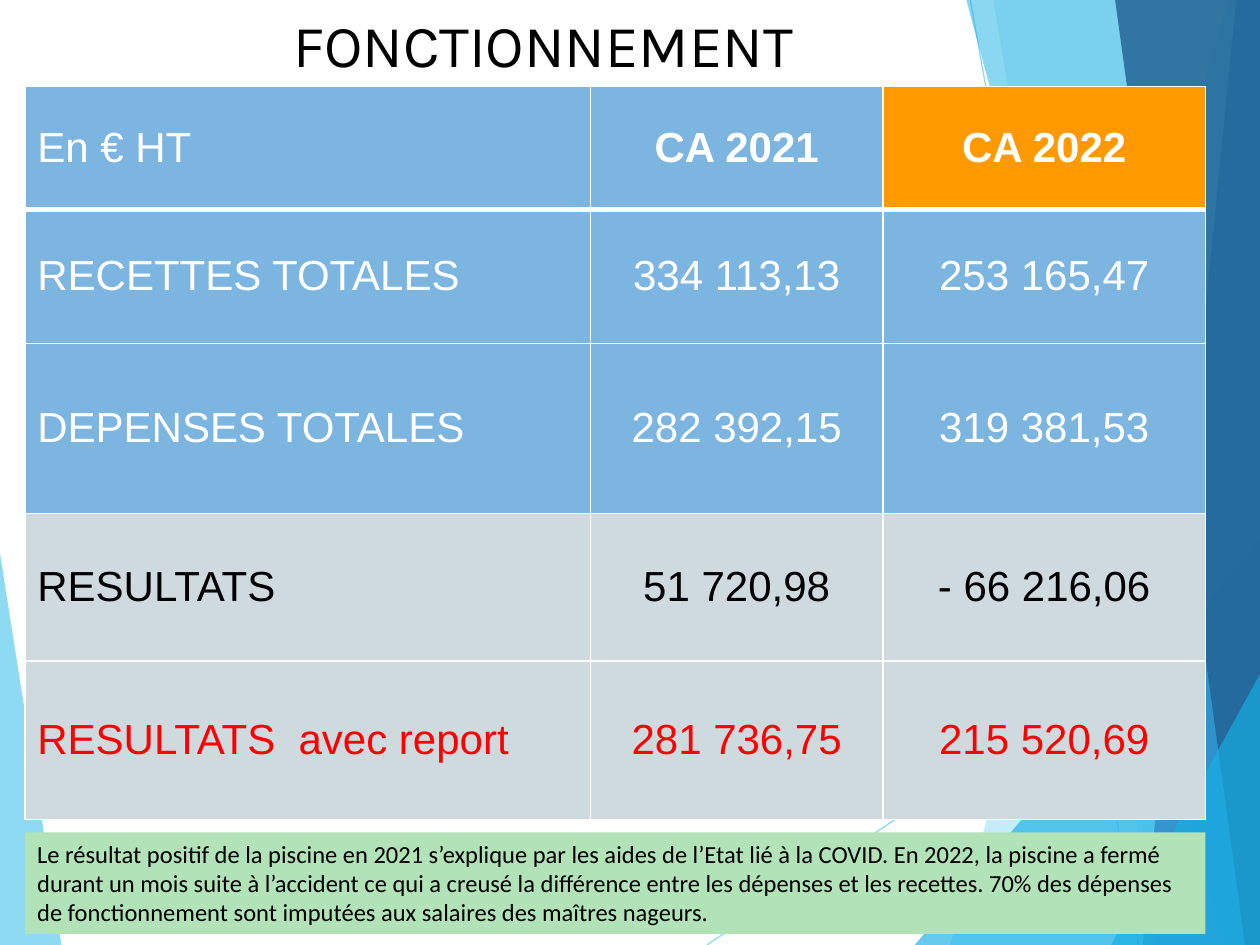
from pptx import Presentation
from pptx.dml.color import RGBColor
from pptx.enum.shapes import MSO_CONNECTOR, MSO_SHAPE
from pptx.enum.text import MSO_ANCHOR, PP_ALIGN
from pptx.oxml import parse_xml
from pptx.oxml.ns import nsdecls, qn
from pptx.oxml.xmlchemy import OxmlElement
from pptx.util import Cm, Pt

WIDTH, HEIGHT = 25.4, 19.05
BLUE, GREY, ORANGE = "7CB5E0", "CFDADF", "FF9900"
WHITE, BLACK, RED = "FFFFFF", "000000", "FF0000"
CYAN, AZURE = "5FCBEF", "17B0E4"

COLUMNS = [11.4, 5.9, 6.5]
# height, fill, text colour, texts
ROWS = [
    (2.48, BLUE, WHITE, ["En € HT", "CA 2021", "CA 2022"]),
    (2.7, BLUE, WHITE, ["RECETTES TOTALES", "334 113,13", "253 165,47"]),
    (3.43, BLUE, WHITE, ["DEPENSES TOTALES", "282 392,15", "319 381,53"]),
    (2.97, GREY, BLACK, ["RESULTATS", "51 720,98", "- 66 216,06"]),
    (3.2, GREY, RED, ["RESULTATS  avec report", "281 736,75", "215 520,69"]),
]
NOTE = (
    "Le résultat positif de la piscine en 2021 s’explique par les aides de l’Etat lié à la COVID. "
    "En 2022, la piscine a fermé durant un mois suite à l’accident ce qui a creusé la différence "
    "entre les dépenses et les recettes. 70% des dépenses de fonctionnement sont imputées aux "
    "salaires des maîtres nageurs."
)


def rgb(color):
    return RGBColor.from_string(color)


def set_opacity(sp, percent):
    for clr in sp._element.spPr.iter(qn("a:srgbClr")):
        alpha = OxmlElement("a:alpha")
        alpha.set("val", str(percent * 1000))
        clr.append(alpha)


def write(tf, text, font="Arial", size=24, color=BLACK, bold=False, align=PP_ALIGN.LEFT):
    tf.word_wrap = True
    p = tf.paragraphs[0]
    p.alignment = align
    r = p.add_run()
    r.text = text
    r.font.name, r.font.size, r.font.bold = font, Pt(size), bold
    r.font.color.rgb = rgb(color)


def add_facet(s, points, color, opacity):
    """Draw a translucent polygon through points given in centimetres."""
    start, *others = [(Cm(x), Cm(y)) for x, y in points]
    builder = s.shapes.build_freeform(*start)
    builder.add_line_segments(others, close=True)
    sp = builder.convert_to_shape()
    sp.shadow.inherit = False
    sp.fill.solid()
    sp.fill.fore_color.rgb = rgb(color)
    sp.line.fill.background()
    set_opacity(sp, opacity)


def add_band(s, top_x, bottom_x, color, opacity):
    """Fill from a slanted edge to the right side of the slide."""
    points = [(top_x, 0), (bottom_x, HEIGHT), (WIDTH, HEIGHT), (WIDTH, 0)]
    add_facet(s, points, color, opacity)


def add_corner(s, bottom_x, right_y):
    """Fill the lower right corner with a triangle."""
    points = [(bottom_x, HEIGHT), (WIDTH, right_y), (WIDTH, HEIGHT)]
    add_facet(s, points, AZURE, 66)


def add_thin_line(s, x1, y1, x2, y2):
    line = s.shapes.add_connector(MSO_CONNECTOR.STRAIGHT, Cm(x1), Cm(y1), Cm(x2), Cm(y2))
    line.line.color.rgb = rgb(CYAN)
    line.line.width = Pt(0.75)
    set_opacity(line, 70)
    line._element.spPr.append(OxmlElement("a:effectLst"))


def add_background(s):
    add_facet(s, [(0, 11.15), (1.24, HEIGHT), (0, HEIGHT)], CYAN, 70)
    add_thin_line(s, 14.25, HEIGHT, WIDTH, 11.62)
    add_thin_line(s, 19.56, 0, 22.96, HEIGHT)
    add_band(s, 24.77, 19.15, CYAN, 36)
    add_band(s, 20.02, 23.34, CYAN, 20)
    add_corner(s, 18.44, 10.9)
    add_band(s, 19.48, 24.64, AZURE, 50)
    add_band(s, 24.92, 23.04, "2E83C3", 70)
    add_band(s, 22.48, 25.1, "226292", 82)
    add_corner(s, 22.4, 13.59)


def set_borders(cell, **widths):
    tcPr = cell._tc.get_or_add_tcPr()
    for side, width in widths.items():
        tcPr.append(parse_xml(
            f'<a:ln{side} {nsdecls("a")} w="{Pt(width)}"><a:solidFill>'
            f'<a:srgbClr val="{WHITE}"/></a:solidFill></a:ln{side}>'))


def add_results_table(s):
    height = sum(row[0] for row in ROWS)
    table = s.shapes.add_table(len(ROWS), len(COLUMNS), Cm(0.5), Cm(1.74),
                               Cm(sum(COLUMNS)), Cm(height)).table
    for column, width in zip(table.columns, COLUMNS):
        column.width = Cm(width)
    for i, (height, fill, color, texts) in enumerate(ROWS):
        table.rows[i].height = Cm(height)
        for j, text in enumerate(texts):
            cell = table.cell(i, j)
            set_borders(cell, L=1, R=1, T=3 if i == 1 else 1, B=3 if i == 0 else 1)
            cell.fill.solid()
            cell.fill.fore_color.rgb = rgb(ORANGE if (i, j) == (0, 2) else fill)
            cell.vertical_anchor = MSO_ANCHOR.MIDDLE
            write(cell.text_frame, text, color=color, bold=i == 0 and j > 0,
                  align=PP_ALIGN.CENTER if j else PP_ALIGN.LEFT)


def add_title(s, text):
    sp = s.shapes.add_textbox(Cm(0.89), Cm(0.03), Cm(20.12), Cm(2.13))
    write(sp.text_frame, text, font="Karla", size=34, align=PP_ALIGN.CENTER)


def add_note(s, text):
    sp = s.shapes.add_shape(MSO_SHAPE.RECTANGLE, Cm(0.5), Cm(16.78), Cm(sum(COLUMNS)), Cm(2.05))
    sp.shadow.inherit = False
    sp.fill.solid()
    sp.fill.fore_color.rgb = rgb("B1E2B8")
    sp.line.fill.background()
    sp.text_frame.vertical_anchor = MSO_ANCHOR.TOP
    write(sp.text_frame, text, font="Calibri", size=14)


def main():
    prs = Presentation()
    prs.slide_width, prs.slide_height = Cm(WIDTH), Cm(HEIGHT)
    s = prs.slides.add_slide(prs.slide_layouts[6])
    add_background(s)
    add_title(s, "FONCTIONNEMENT")
    add_results_table(s)
    add_note(s, NOTE)
    prs.save("out.pptx")


if __name__ == "__main__":
    main()
